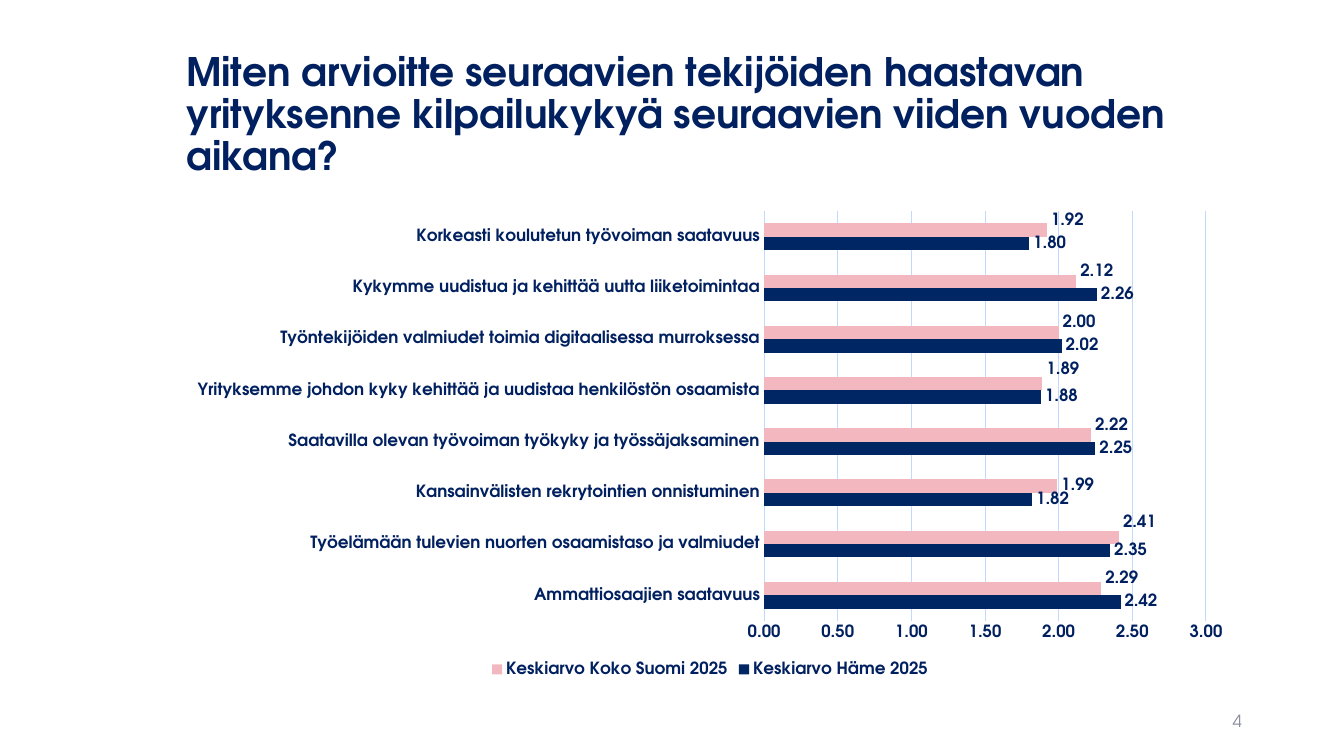
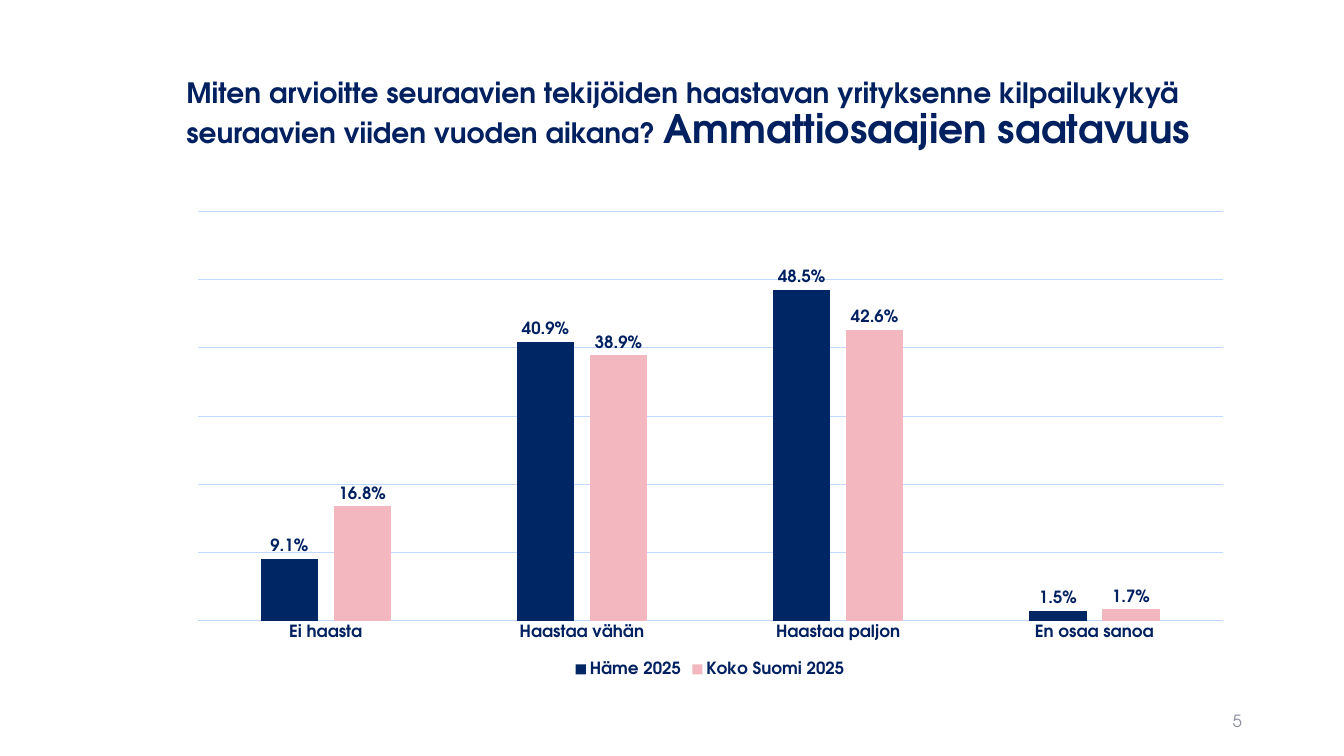
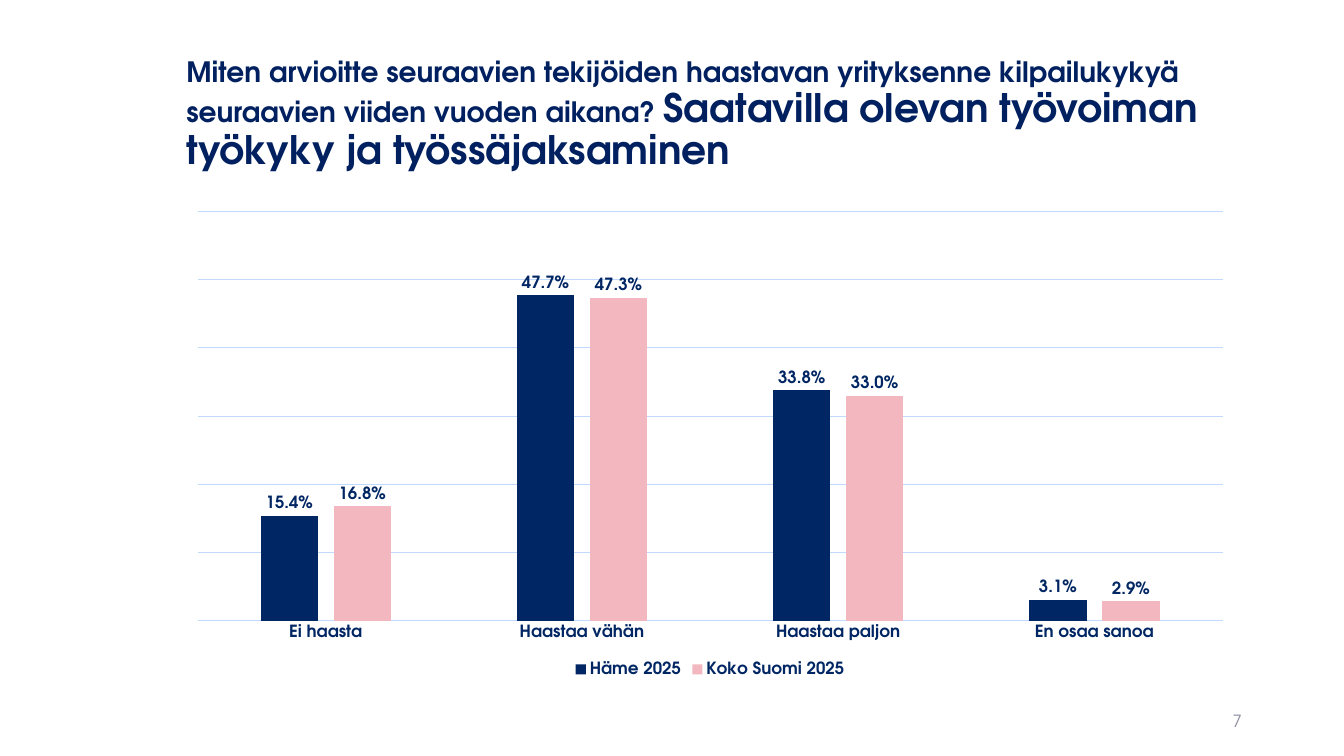
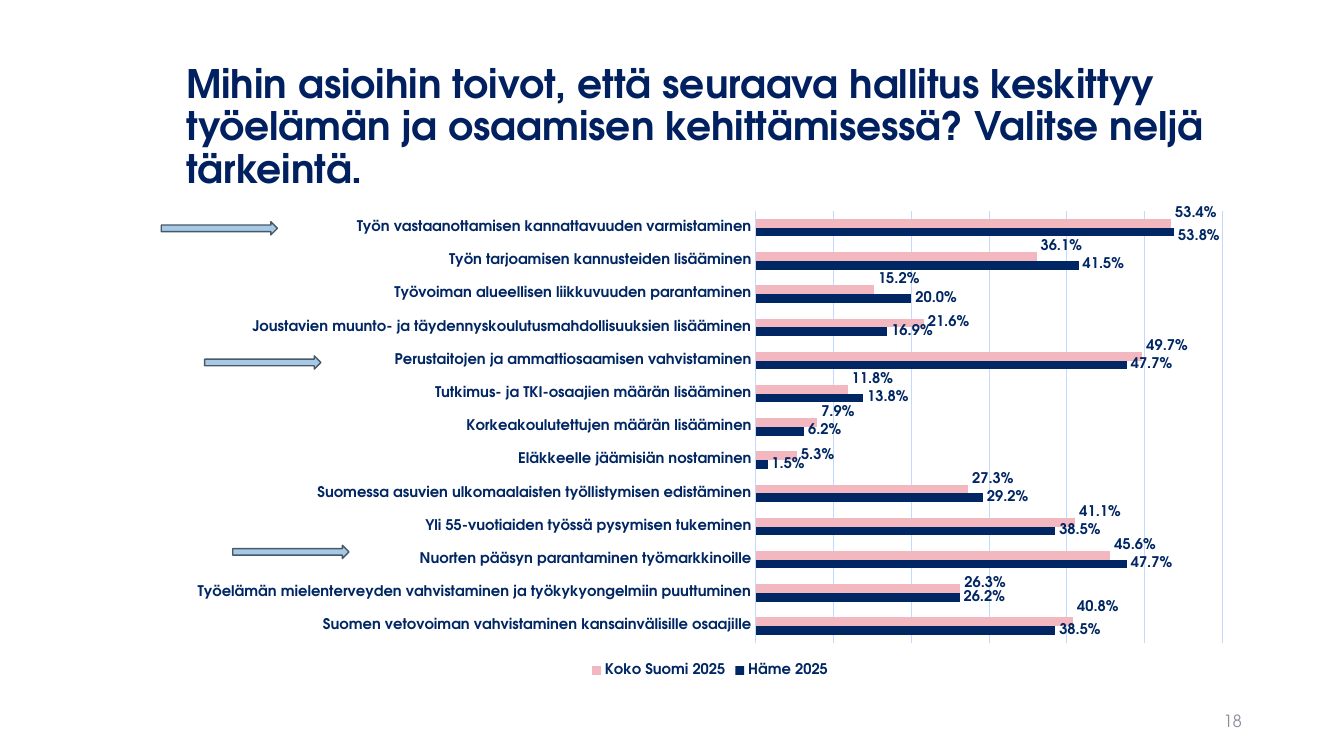
"""Build four survey slides with bar and column charts."""
from dataclasses import dataclass

import lxml.etree
import pptx
import pptx.chart.data
import pptx.dml.color
import pptx.enum.chart
import pptx.enum.shapes
import pptx.enum.text
import pptx.oxml.ns
import pptx.util

Pt = pptx.util.Pt
Kind = pptx.enum.chart.XL_CHART_TYPE
Align = pptx.enum.text.PP_ALIGN


@dataclass(frozen=True)
class Theme:
    font: str = "TeX Gyre Adventor"
    title: str = "002060"
    navy: str = "002663"
    pink: str = "F2B7BF"
    grid: str = "C1D9FF"
    number: str = "8C8E9F"
    arrow: str = "A5C9E7"
    arrow_line: str = "485865"
    title_size: float = 28
    question_size: float = 20
    body_size: float = 12
    dense_size: float = 10.5


def rgb(value):
    return pptx.dml.color.RGBColor.from_string(value)


class Slides:
    def __init__(self, theme):
        self.theme = theme
        self.deck = pptx.Presentation()
        self.deck.slide_width, self.deck.slide_height = Pt(960), Pt(540)
        self.page = None

    def style(self, font, size, color, bold=True):
        font.name, font.size, font.bold = self.theme.font, Pt(size), bold
        font.color.rgb = rgb(color)

    def add_text(self, para, text, *, size, color, bold=True):
        span = para.add_run()
        span.text = text
        self.style(span.font, size, color, bold)

    def text_box(self, left, top, width, height, align=Align.LEFT):
        box = self.page.shapes.add_textbox(Pt(left), Pt(top), Pt(width), Pt(height))
        frame = box.text_frame
        frame.word_wrap = True
        frame.vertical_anchor = pptx.enum.text.MSO_ANCHOR.MIDDLE
        para = frame.paragraphs[0]
        para.alignment = align
        return para

    def start(self, number, *title, top=36):
        self.page = self.deck.slides.add_slide(self.deck.slide_layouts[6])
        para = self.text_box(126, top, 762.5, 129.6 - top)
        para.line_spacing = 0.9
        for text, size in title:
            self.add_text(para, text, size=size, color=self.theme.title)
        para = self.text_box(678.2, 500.4, 216, 28.8, Align.RIGHT)
        self.add_text(para, str(number), size=self.theme.body_size,
                      color=self.theme.number, bold=False)

    def shift_label(self, series, index, shift, size, ink):
        label = series.points[index].data_label
        self.style(label.font, size, ink)
        label.position = pptx.enum.chart.XL_LABEL_POSITION.OUTSIDE_END
        mark = series._element.xpath(f"c:dLbls/c:dLbl/c:idx[@val='{index}']")[0]
        qn = pptx.oxml.ns.qn
        layout = lxml.etree.Element(qn("c:layout"))
        manual = lxml.etree.SubElement(layout, qn("c:manualLayout"))
        for axis, value in (("c:x", 0), ("c:y", shift)):
            lxml.etree.SubElement(manual, qn(axis)).set("val", str(value))
        mark.addnext(layout)

    def chart(self, kind, categories, series, *, top_value, step, number_format="0.0%",
              gap=182, overlap=0, size=None, ink=None, show_values=False, shifts=()):
        size = size or self.theme.body_size
        ink = ink or self.theme.navy
        data = pptx.chart.data.CategoryChartData(number_format=number_format)
        data.categories = categories
        for name, values in series:
            data.add_series(name, values)
        chart = self.page.shapes.add_chart(
            kind, Pt(126), Pt(144), Pt(762.5), Pt(342.7), data).chart
        self.style(chart.font, size, ink)
        chart.has_title = False
        chart.has_legend = True
        chart.legend.position = pptx.enum.chart.XL_LEGEND_POSITION.BOTTOM
        chart.legend.include_in_layout = False
        self.style(chart.legend.font, size, ink)

        values = chart.value_axis
        values.minimum_scale, values.maximum_scale, values.major_unit = 0, top_value, step
        values.visible = show_values
        values.has_major_gridlines = True
        self.line(values.major_gridlines.format.line)
        values.format.line.fill.background()
        values.tick_labels.number_format = number_format
        values.tick_labels.number_format_is_linked = False
        self.line(chart.category_axis.format.line)
        for axis in (values, chart.category_axis):
            axis.major_tick_mark = pptx.enum.chart.XL_TICK_MARK.NONE
            self.style(axis.tick_labels.font, size, ink)

        plot = chart.plots[0]
        plot.gap_width, plot.overlap, plot.vary_by_categories = gap, overlap, False
        for item, color in zip(plot.series, (self.theme.navy, self.theme.pink)):
            item.format.fill.solid()
            item.format.fill.fore_color.rgb = rgb(color)
            labels = item.data_labels
            labels.show_value = True
            labels.position = pptx.enum.chart.XL_LABEL_POSITION.OUTSIDE_END
            labels.number_format = number_format
            labels.number_format_is_linked = False
            self.style(labels.font, size, ink)
        for item, moves in zip(plot.series, shifts):
            for index, shift in moves.items():
                self.shift_label(item, index, shift, size, ink)

    def line(self, line):
        line.color.rgb = rgb(self.theme.grid)
        line.width = Pt(0.75)

    def arrow(self, left, top):
        shape = self.page.shapes.add_shape(
            pptx.enum.shapes.MSO_SHAPE.RIGHT_ARROW, Pt(left), Pt(top), Pt(83), Pt(9.4))
        shape.shadow.inherit = False
        shape.fill.solid()
        shape.fill.fore_color.rgb = rgb(self.theme.arrow)
        shape.line.color.rgb = rgb(self.theme.arrow_line)
        shape.line.width = Pt(1)


QUESTION = ("Miten arvioitte seuraavien tekijöiden haastavan yrityksenne "
            "kilpailukykyä seuraavien viiden vuoden aikana?")

FACTORS = (
    "Ammattiosaajien saatavuus",
    "Työelämään tulevien nuorten osaamistaso ja valmiudet",
    "Kansainvälisten rekrytointien onnistuminen",
    "Saatavilla olevan työvoiman työkyky ja työssäjaksaminen",
    "Yrityksemme johdon kyky kehittää ja uudistaa henkilöstön osaamista",
    "Työntekijöiden valmiudet toimia digitaalisessa murroksessa",
    "Kykymme uudistua ja kehittää uutta liiketoimintaa",
    "Korkeasti koulutetun työvoiman saatavuus",
)

ANSWERS = ("Ei haasta", "Haastaa vähän", "Haastaa paljon", "En osaa sanoa")

WISHES = (
    "Suomen vetovoiman vahvistaminen kansainvälisille osaajille",
    "Työelämän mielenterveyden vahvistaminen ja työkykyongelmiin puuttuminen",
    "Nuorten pääsyn parantaminen työmarkkinoille",
    "Yli 55-vuotiaiden työssä pysymisen tukeminen",
    "Suomessa asuvien ulkomaalaisten työllistymisen edistäminen",
    "Eläkkeelle jäämisiän nostaminen",
    "Korkeakoulutettujen määrän lisääminen",
    "Tutkimus- ja TKI-osaajien määrän lisääminen",
    "Perustaitojen ja ammattiosaamisen vahvistaminen",
    "Joustavien muunto- ja täydennyskoulutusmahdollisuuksien lisääminen",
    "Työvoiman alueellisen liikkuvuuden parantaminen",
    "Työn tarjoamisen kannusteiden lisääminen",
    "Työn vastaanottamisen kannattavuuden varmistaminen",
)

ANSWER_PAGES = (
    (5, "Ammattiosaajien saatavuus", Theme.title,
     (0.091, 0.409, 0.485, 0.015), (0.168, 0.389, 0.426, 0.017)),
    (7, "Saatavilla olevan työvoiman työkyky ja työssäjaksaminen", Theme.navy,
     (0.154, 0.477, 0.338, 0.031), (0.168, 0.473, 0.33, 0.029)),
)


def main():
    theme = Theme()
    slides = Slides(theme)

    slides.start(4, (QUESTION, theme.title_size))
    slides.chart(
        Kind.BAR_CLUSTERED, FACTORS,
        (("Keskiarvo Häme 2025", (2.42, 2.35, 1.82, 2.25, 1.88, 2.02, 2.26, 1.8)),
         ("Keskiarvo Koko Suomi 2025", (2.29, 2.41, 1.99, 2.22, 1.89, 2, 2.12, 1.92))),
        top_value=3, step=0.5, number_format="0.00", ink=theme.title, show_values=True,
        shifts=({}, {0: -0.02, 1: -0.03, 3: -0.02, 4: -0.03,
                     5: -0.02, 6: -0.02, 7: -0.02}))

    for number, topic, ink, region, country in ANSWER_PAGES:
        slides.start(number, (QUESTION + " ", theme.question_size), (topic, theme.title_size))
        slides.chart(
            Kind.COLUMN_CLUSTERED, ANSWERS,
            (("Häme 2025", region), ("Koko Suomi 2025", country)),
            top_value=0.6, step=0.1, gap=219, overlap=-27, ink=ink)

    slides.start(18, ("Mihin asioihin toivot, että seuraava hallitus keskittyy työelämän ja "
                      "osaamisen kehittämisessä? Valitse neljä tärkeintä.",
                      theme.title_size), top=53.3)
    slides.chart(
        Kind.BAR_CLUSTERED, WISHES,
        (("Häme 2025", (0.385, 0.262, 0.477, 0.385, 0.292, 0.015, 0.062,
                        0.138, 0.477, 0.169, 0.2, 0.415, 0.538)),
         ("Koko Suomi 2025", (0.408, 0.263, 0.456, 0.411, 0.273, 0.053, 0.079,
                              0.118, 0.497, 0.216, 0.152, 0.361, 0.534))),
        top_value=0.6, step=0.1, size=theme.dense_size,
        shifts=({12: 0.01},
                {0: -0.03, 1: -0.01, 2: -0.02, 3: -0.02, 4: -0.02, 6: -0.02,
                 7: -0.02, 8: -0.02, 10: -0.02, 11: -0.02, 12: -0.02}))
    for left, top in ((166.3, 389.5), (115.2, 158.4), (146.2, 254.2)):
        slides.arrow(left, top)

    slides.deck.save("out.pptx")


if __name__ == "__main__":
    main()
